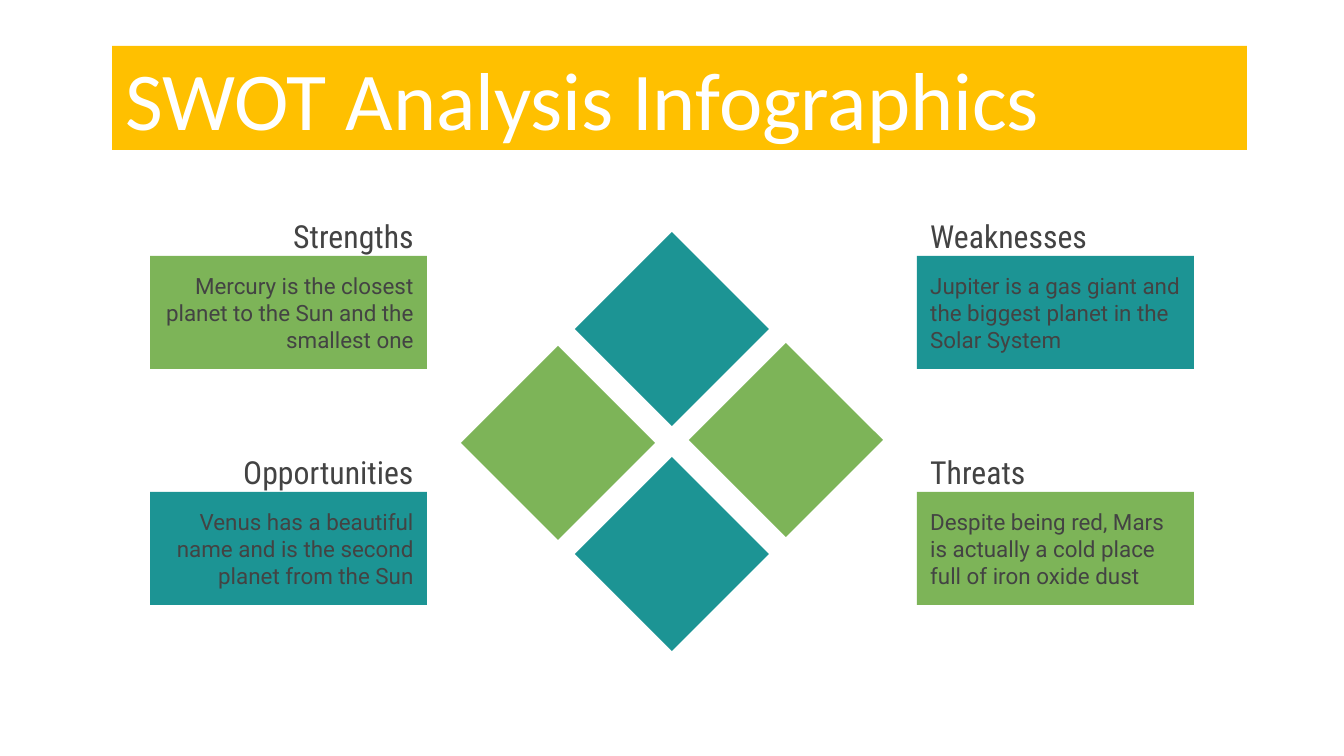
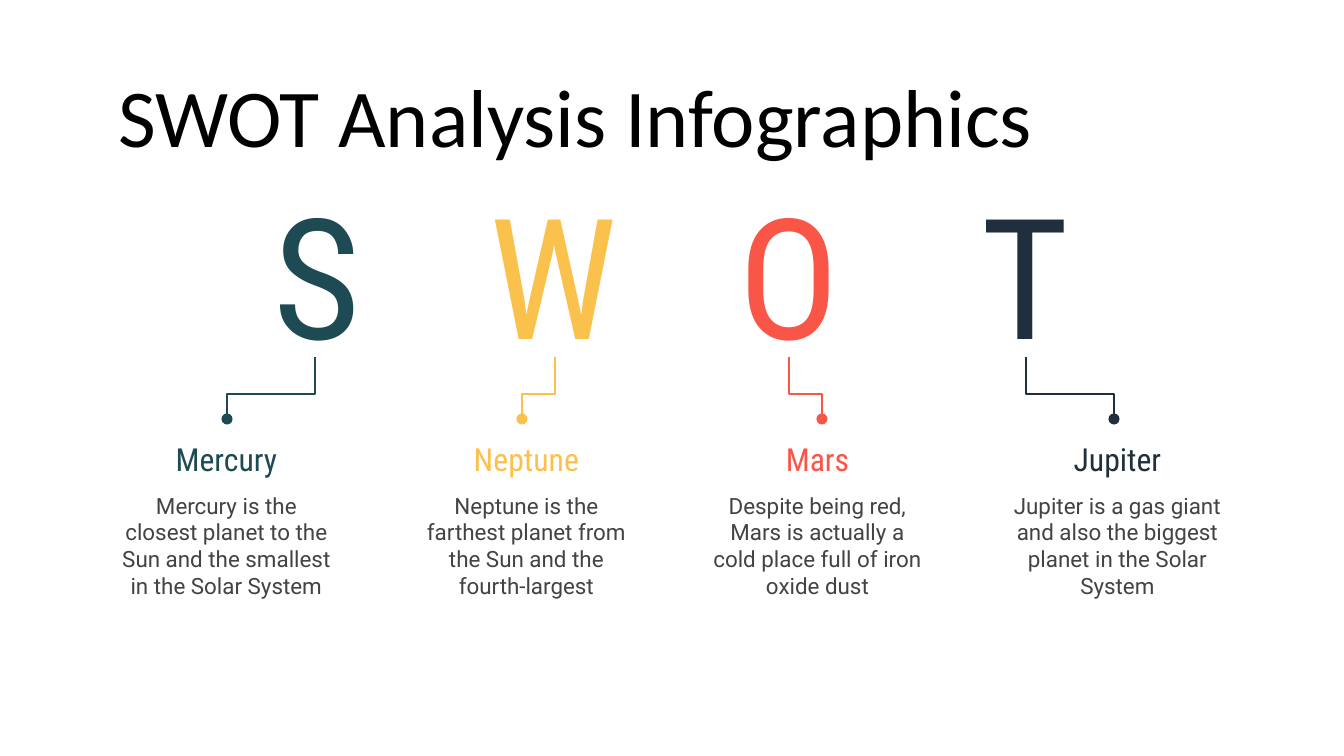
from lxml import etree
from pptx import Presentation
from pptx.dml.color import RGBColor
from pptx.enum.shapes import MSO_SHAPE as SHAPE
from pptx.enum.text import MSO_ANCHOR as ANCHOR, MSO_AUTO_SIZE as AUTO_SIZE, PP_ALIGN as ALIGN
from pptx.oxml.ns import qn
from pptx.util import Inches, Pt

PX = Inches(10) / 1344  # one px in EMU
TEAL, GREEN, AMBER = "1C9494", "7DB458", "FFC000"
GREY, WHITE, BLACK = "434343", "FFFFFF", "000000"
HEADING, BODY = "Roboto Condensed", "Roboto"
rgb = RGBColor.from_string


def box(*lengths):
    return [round(length * PX) for length in lengths]


def write(shape, text, size=12, font=BODY, color=GREY, align=ALIGN.LEFT):
    frame = shape.text_frame
    frame.word_wrap = True
    frame.auto_size = AUTO_SIZE.NONE
    frame.vertical_anchor = ANCHOR.MIDDLE
    frame.margin_left = frame.margin_right = Inches(0.1)
    frame.margin_top = frame.margin_bottom = Inches(0.1)
    paragraph = frame.paragraphs[0]
    paragraph.alignment = align
    run = paragraph.add_run()
    run.text = text
    run.font.size = Pt(size)
    run.font.name = font
    run.font.color.rgb = rgb(color)


deck = Presentation()
deck.slide_width, deck.slide_height = box(1344, 756)

# Both slides with their titles
slides = []
for place, title_color in [((112, 46, 1135, 104), WHITE), ((105, 79, 1135, 71), BLACK)]:
    slide = deck.slides.add_slide(deck.slide_layouts[5])
    title = slide.shapes.title
    title.left, title.top, title.width, title.height = box(*place)
    write(title, "SWOT Analysis Infographics", size=44, font="Calibri", color=title_color)
    slides.append(slide)
matrix, letters = slides

# Slide 1: yellow title band
band = matrix.shapes.title
band.fill.solid()
band.fill.fore_color.rgb = rgb(AMBER)

# Four cards, two by two
cards = [
    ("Strengths", "Mercury is the closest planet to the Sun and the smallest one", GREEN),
    ("Weaknesses", "Jupiter is a gas giant and the biggest planet in the Solar System", TEAL),
    ("Opportunities", "Venus has a beautiful name and is the second planet from the Sun", TEAL),
    ("Threats", "Despite being red, Mars is actually a cold place full of iron oxide dust", GREEN),
]
for index, (heading, detail, color) in enumerate(cards):
    row, column = divmod(index, 2)
    left, top = 150 + 767 * column, 204 + 236 * row
    align = ALIGN.LEFT if column else ALIGN.RIGHT
    panel = matrix.shapes.add_shape(SHAPE.RECTANGLE, *box(left, top + 52, 277, 113))
    panel.shadow.inherit = False
    panel.fill.solid()
    panel.fill.fore_color.rgb = rgb(color)
    panel.line.fill.background()
    write(panel, detail, align=align)
    label = matrix.shapes.add_textbox(*box(left, top, 277, 63))
    write(label, heading, size=17, font=HEADING, align=align)

# Pairs of diamonds, each pair one outline
HALF = 97
for color, centres in [(TEAL, [(672, 329), (672, 554)]), (GREEN, [(558, 443), (786, 440)])]:
    x, y = centres[0]
    diamonds = matrix.shapes.build_freeform(x, y - HALF, scale=PX)
    for x, y in centres:
        if (x, y) != centres[0]:
            diamonds.move_to(x, y - HALF)
        diamonds.add_line_segments([(x + HALF, y), (x, y + HALF), (x - HALF, y)], close=True)
    pair = diamonds.convert_to_shape()
    pair.shadow.inherit = False
    pair.fill.solid()
    pair.fill.fore_color.rgb = rgb(color)
    pair.line.fill.background()

# Slide 2: letter, planet, detail, colour, text left, line start and end
planets = [
    ("S", "Mercury", "Mercury is the closest planet to the Sun and the smallest in the Solar System",
     "1D4A53", 105, 315, 227),
    ("W", "Neptune", "Neptune is the farthest planet from the Sun and the fourth-largest",
     "FAC14D", 405, 555, 522),
    ("O", "Mars", "Despite being red, Mars is actually a cold place full of iron oxide dust",
     "F95647", 696, 789, 822),
    ("T", "Jupiter", "Jupiter is a gas giant and also the biggest planet in the Solar System",
     "202F3D", 996, 1026, 1114),
]
for index, (letter, planet, detail, color, left, start, end) in enumerate(planets):
    group = letters.shapes.add_group_shape().shapes
    initial = group.add_textbox(*box(216 + 236 * index, 198, 203, 148))
    write(initial, letter, size=90, font=HEADING, color=color, align=ALIGN.CENTER)
    name = group.add_textbox(*box(left, 427, 243, 63))
    write(name, planet, size=17, font=HEADING, color=color, align=ALIGN.CENTER)
    description = group.add_textbox(*box(left, 479, 243, 133))
    write(description, detail, align=ALIGN.CENTER)

    # Stepped line ending in a dot
    steps = group.build_freeform(start, 357, scale=PX)
    steps.add_line_segments([(start, 394), (end, 394), (end, 419)], close=False)
    leader = steps.convert_to_shape()
    leader.shadow.inherit = False
    leader.fill.background()
    leader.line.color.rgb = rgb(color)
    leader.line.width = Pt(0.75)
    outline = leader.element.spPr.find(qn("a:ln"))
    etree.SubElement(outline, qn("a:tailEnd"), type="oval", w="med", len="med")

deck.save("out.pptx")
